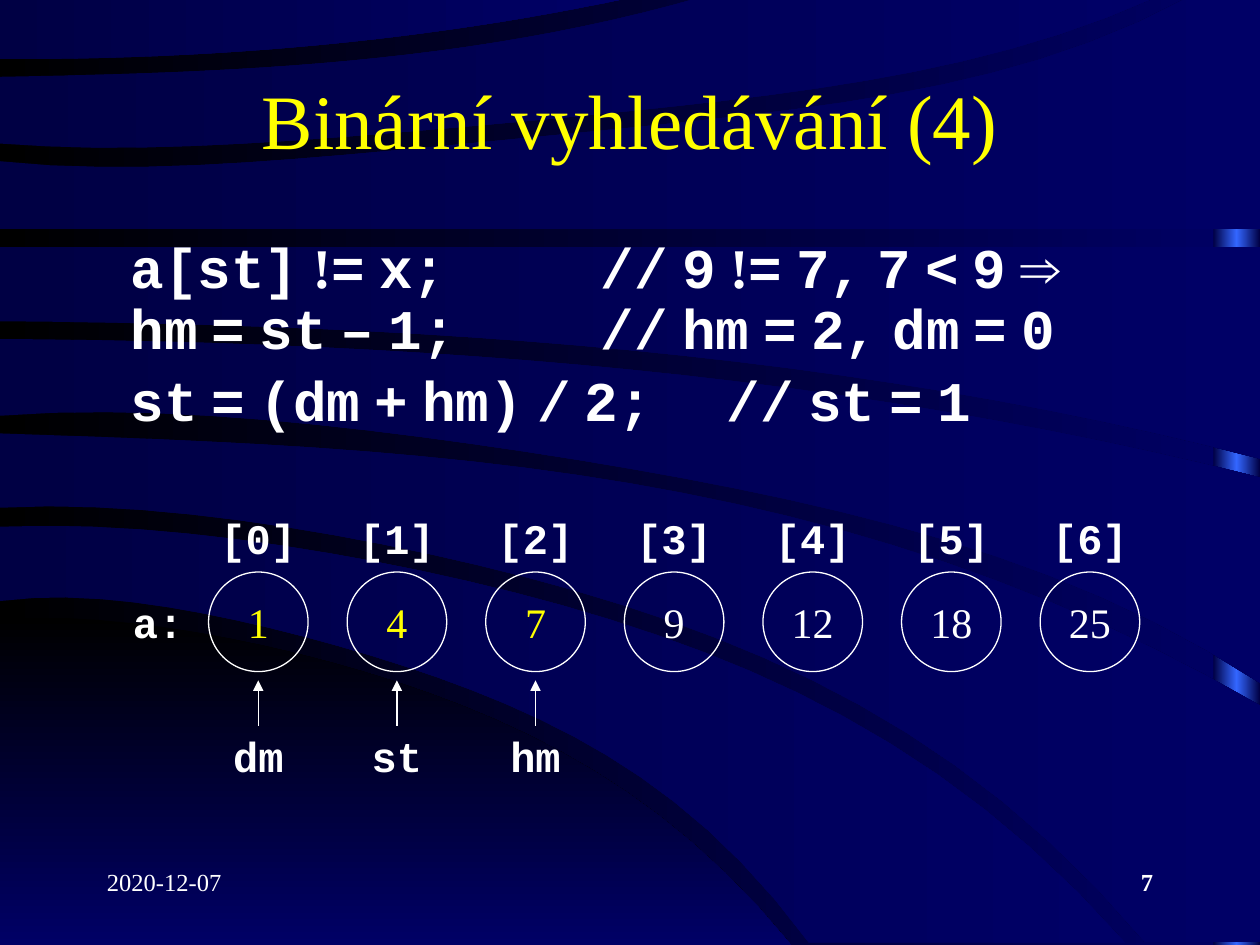
from copy import deepcopy
from dataclasses import dataclass
from itertools import groupby
from math import prod
from typing import Optional

from lxml.etree import SubElement
from pptx import Presentation
from pptx.dml.color import RGBColor
from pptx.enum.shapes import MSO_CONNECTOR, MSO_SHAPE
from pptx.enum.text import MSO_ANCHOR as ANCHOR, PP_ALIGN as ALIGN
from pptx.oxml.ns import qn
from pptx.util import Inches, Pt

BLACK = RGBColor(0x00, 0x00, 0x00)
NAVY = RGBColor(0x00, 0x00, 0x44)
INDIGO = RGBColor(0x00, 0x00, 0x66)
BLUE = RGBColor(0x33, 0x66, 0xFF)
WHITE = RGBColor(0xFF, 0xFF, 0xFF)
YELLOW = RGBColor(0xFF, 0xFF, 0x00)
SERIF, MONO = "Times New Roman", "Courier New"

# Array layout
FIRST_X, PITCH, CELL = 2.05, 1.1, 0.79
LABEL_W, INDEX_Y, CIRCLE_Y, NAME_Y = 0.87, 3.87, 4.54, 5.6
CURVE_STEPS = 24

Point = tuple[float, float]


@dataclass
class Cell:
    value: str
    color: RGBColor = WHITE
    pointer: str = ""


@dataclass
class Band:
    """Area between two smooth edges, each given by a few points from left to right."""
    upper: list[Point]
    lower: list[Point]
    corner: Optional[Point] = None
    start: RGBColor = NAVY
    angle: int = 0


CELLS = [Cell("1", YELLOW, "dm"), Cell("4", YELLOW, "st"), Cell("7", YELLOW, "hm"),
         Cell("9"), Cell("12"), Cell("18"), Cell("25")]

CODE = [[" a[st] != x;\t// 9 != 7, 7 < 9 ⇒", " hm = st – 1;\t// hm = 2, dm = 0"],
        [" st = (dm + hm) / 2;\t// st = 1"]]

# Background bands, from back to front
BANDS = [
    Band([(0, 4.91), (1.93, 5.09), (3.86, 5.68), (5.28, 6.51), (6.28, 7.5)],
         [(0, 7.5), (6.28, 7.5)], start=BLACK, angle=270),
    Band([(0, 4.18), (2.49, 4.37), (4.72, 4.88), (7.27, 6.03), (8.93, 7.48)],
         [(0, 4.77), (2.21, 5), (4.16, 5.65), (5.53, 6.51), (6.42, 7.48)]),
    Band([(0, 3.44), (3.43, 3.63), (6.93, 4.28), (10, 5.6)],
         [(0, 4.03), (2.67, 4.25), (5.21, 4.89), (7.56, 6.06), (9.09, 7.48)], (10, 7.48)),
    Band([(0, 2.69), (3.49, 2.81), (6.62, 3.13), (10, 3.79)],
         [(0, 3.3), (3.51, 3.49), (6.83, 4.1), (8.81, 4.77), (10, 5.42)]),
    Band([(0, 1.96), (10, 1.96)], [(0, 2.55), (3.32, 2.65), (7.02, 3.03), (10, 3.64)]),
    Band([(0, 1.28), (3.29, 1.18), (6.44, 0.85), (8.35, 0.44), (9.43, -0.02)],
         [(0, 1.82), (10, 1.82)], (10, -0.02)),
    Band([(0, 0.61), (2.33, 0.52), (4.16, 0.3), (5.56, -0.02)],
         [(0, 1.14), (3.41, 1.03), (6.14, 0.75), (8.02, 0.39), (9.17, -0.02)]),
    Band([(0, -0.02), (5.01, -0.02)], [(0, 0.47), (2.02, 0.4), (3.46, 0.25), (5.01, -0.02)]),
]


def smooth(knots: list[Point]) -> list[Point]:
    """Sample the polynomial curve through the knots."""
    if len(knots) == 2:
        return knots
    left, right = knots[0][0], knots[-1][0]
    xs = [left + (right - left) * i / CURVE_STEPS for i in range(CURVE_STEPS + 1)]
    return [(x, sum(yk * prod((x - xj) / (xk - xj) for xj, _ in knots if xj != xk)
                    for xk, yk in knots)) for x in xs]


def set_gradient(fill, start: RGBColor, end: RGBColor, angle: int = 0) -> None:
    fill.gradient()
    fill.gradient_angle = angle
    for stop, position, color in zip(fill.gradient_stops, (0, 1), (start, end)):
        stop.position = position
        stop.color.rgb = color


def add_band(s, band: Band) -> None:
    corner = [band.corner] if band.corner else []
    outline = smooth(band.upper) + corner + smooth(band.lower)[::-1]
    first, *rest = [(Inches(x), Inches(y)) for x, y in outline]
    builder = s.shapes.build_freeform(*first)
    builder.add_line_segments(rest)
    sp = builder.convert_to_shape()
    sp.shadow.inherit = False
    sp.line.fill.background()
    set_gradient(sp.fill, band.start, INDIGO, band.angle)


def add_run(p, text: str, size: int, font: str, color: RGBColor = WHITE, bold: bool = False) -> None:
    r = p.add_run()
    r.text = text
    r.font.size, r.font.name, r.font.bold = Pt(size), font, bold
    r.font.color.rgb = color


def add_label(s, x: float, y: float, w: float, h: float, text: str, size: int = 24,
              font: str = MONO, bold: bool = True, align=ALIGN.CENTER, anchor=ANCHOR.MIDDLE) -> None:
    tf = s.shapes.add_textbox(Inches(x), Inches(y), Inches(w), Inches(h)).text_frame
    tf.word_wrap, tf.vertical_anchor = True, anchor
    tf.paragraphs[0].alignment = align
    add_run(tf.paragraphs[0], text, size, font, bold=bold)


def add_code_line(p, line: str) -> None:
    """Code is monospaced; inner spaces and a few symbols are serif."""
    add_run(p, line[0], 32, MONO, bold=True)
    for serif, chars in groupby(line[1:], lambda ch: ch in " !⇒"):
        add_run(p, "".join(chars), 32, SERIF if serif else MONO, bold=True)


def add_arrow(s, x: float, y_from: float, y_to: float) -> None:
    line = s.shapes.add_connector(MSO_CONNECTOR.STRAIGHT, Inches(x), Inches(y_from),
                                  Inches(x), Inches(y_to))
    line.line.color.rgb, line.line.width = WHITE, Pt(0.75)
    SubElement(line._element.spPr.find(qn("a:ln")), qn("a:tailEnd"), type="triangle")
    SubElement(line._element.spPr, qn("a:effectLst"))


def add_cell(s, index: int, cell: Cell) -> None:
    x = FIRST_X + index * PITCH
    sp = s.shapes.add_shape(MSO_SHAPE.OVAL, Inches(x - CELL / 2), Inches(CIRCLE_Y),
                            Inches(CELL), Inches(CELL))
    sp.shadow.inherit = False
    sp.fill.background()
    sp.line.color.rgb, sp.line.width = WHITE, Pt(0.75)
    tf = sp.text_frame
    tf.word_wrap, tf.vertical_anchor = False, ANCHOR.MIDDLE
    tf.paragraphs[0].alignment = ALIGN.CENTER
    add_run(tf.paragraphs[0], cell.value, 24, SERIF, cell.color)
    add_label(s, x - LABEL_W / 2, INDEX_Y, LABEL_W, CELL, f"[{index}]")
    if cell.pointer:
        add_label(s, x - LABEL_W / 2, NAME_Y, LABEL_W, CELL, cell.pointer)
        add_arrow(s, x, 5.76, 5.4)


def main() -> None:
    prs = Presentation()
    prs.slide_width, prs.slide_height = Inches(10), Inches(7.5)
    s = prs.slides.add_slide(prs.slide_layouts[5])

    # Background: gradient, glowing right edge and bands
    set_gradient(s.background.fill, BLACK, INDIGO)
    edge = s.shapes.add_shape(MSO_SHAPE.RECTANGLE, Inches(9.63), 0, Inches(0.37), Inches(7.5))
    edge.shadow.inherit = False
    edge.line.fill.background()
    set_gradient(edge.fill, NAVY, NAVY)
    stops = edge._element.spPr.find(".//" + qn("a:gsLst"))
    stops.insert(1, deepcopy(stops[0]))
    middle = edge.fill.gradient_stops[1]
    middle.position, middle.color.rgb = 0.5, BLUE
    for band in BANDS:
        add_band(s, band)

    # Title, brought in front of the bands
    title = s.shapes.title
    title.left, title.top, title.width, title.height = map(Inches, (0.75, 0.48, 8.5, 0.92))
    title.text_frame.vertical_anchor = ANCHOR.MIDDLE
    p = title.text_frame.paragraphs[0]
    p.alignment = ALIGN.CENTER
    add_run(p, "Binární vyhledávání (4)", 44, SERIF, YELLOW)
    s.shapes._spTree.append(title._element)

    # Code with comments on tab stops
    tf = s.shapes.add_textbox(Inches(0.67), Inches(1.86), Inches(8.75), Inches(1.65)).text_frame
    tf.word_wrap = True
    for i, lines in enumerate(CODE):
        p = tf.add_paragraph() if i else tf.paragraphs[0]
        p.line_spacing = 0.9
        p.space_before = Pt(6.4 if i else 0)
        tabs = SubElement(p._p.get_or_add_pPr(), qn("a:tabLst"))
        for stop in (4, 5):
            SubElement(tabs, qn("a:tab"), pos=str(Inches(stop)), algn="l")
        for j, line in enumerate(lines):
            if j:
                p.add_line_break()
            add_code_line(p, line)

    # Array with its pointers
    add_label(s, 0.9, CIRCLE_Y, 0.71, CELL, "a:")
    for index, cell in enumerate(CELLS):
        add_cell(s, index, cell)

    # Footer
    add_label(s, 0.75, 6.83, 2.08, 0.5, "2020-12-07", 14, SERIF, False, ALIGN.LEFT, ANCHOR.TOP)
    add_label(s, 7.17, 6.83, 2.08, 0.5, "7", 14, SERIF, True, ALIGN.RIGHT, ANCHOR.TOP)

    prs.save("out.pptx")


if __name__ == "__main__":
    main()
